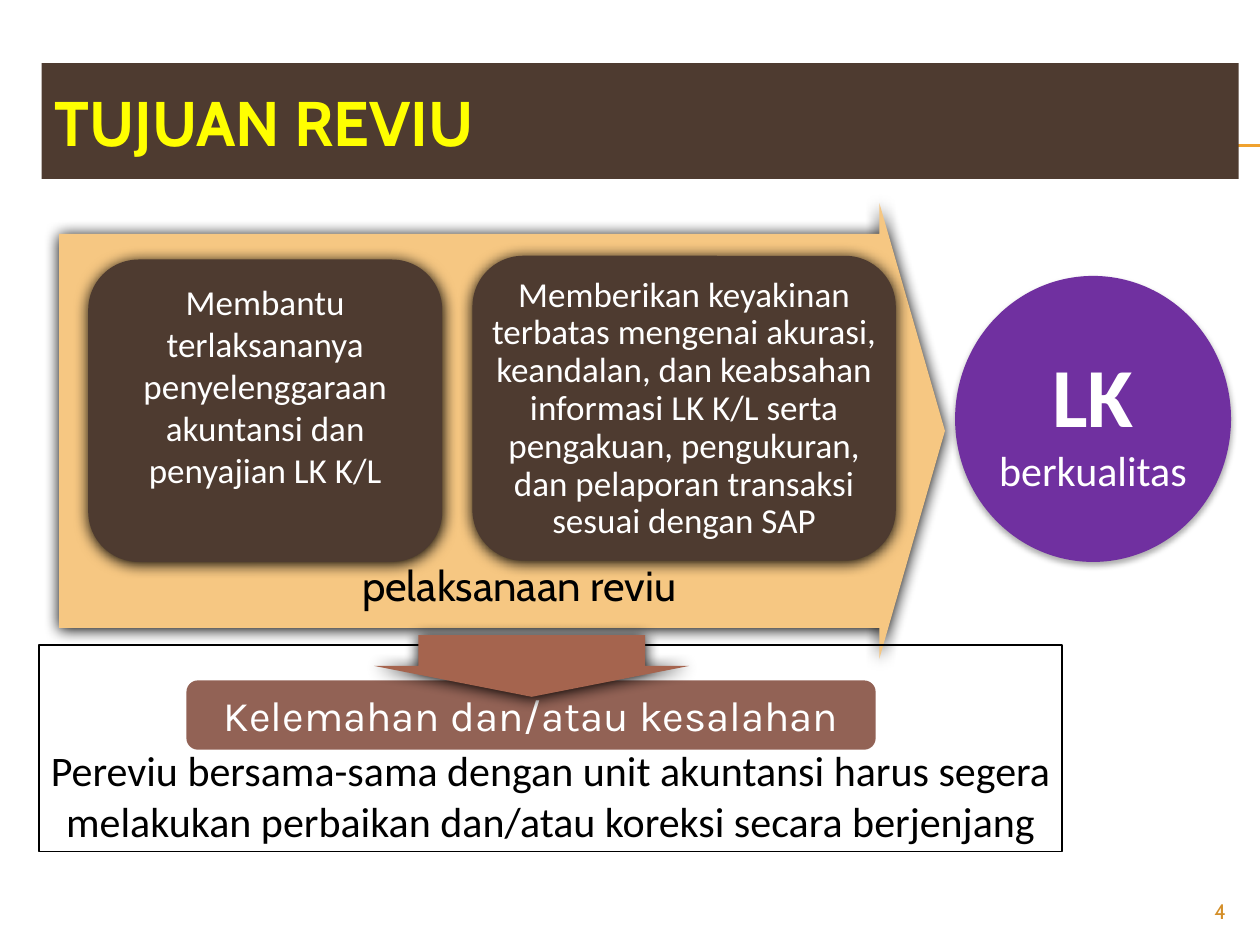
from dataclasses import dataclass

from lxml.etree import SubElement
from pptx import Presentation
from pptx.dml.color import RGBColor
from pptx.enum.shapes import MSO_CONNECTOR, MSO_SHAPE
from pptx.enum.text import MSO_ANCHOR, MSO_AUTO_SIZE, PP_ALIGN
from pptx.oxml.ns import qn
from pptx.util import Inches, Pt


@dataclass(frozen=True)
class Theme:
    brown: str = "4E3B30"
    sand: str = "F6C782"
    rust: str = "A5644E"
    clay: str = "926255"
    purple: str = "7030A0"
    gold: str = "F0A22E"
    number: str = "D48F29"
    yellow: str = "FFFF00"
    white: str = "FFFFFF"
    black: str = "000000"
    heading: str = "Cabin"
    body: str = "Calibri"
    label: str = "Karla"
    title_size: int = 36
    big_size: int = 48
    text_size: int = 24
    box_size: int = 20
    number_size: int = 12
    # Shadows: opacity in percent, blur and distance in points
    glow: tuple = (100, 8.5, 1)
    soft: tuple = (32, 3.5, 2.2)


class SlideBuilder:
    def __init__(self, slide, theme):
        self.s = slide
        self.theme = theme

    def line(self, x1, y1, x2, y2):
        c = self.s.shapes.add_connector(
            MSO_CONNECTOR.STRAIGHT, *map(Inches, (x1, y1, x2, y2)))
        c.line.color.rgb = RGBColor.from_string(self.theme.gold)
        c.line.width = Pt(0.75)
        SubElement(c._element.spPr, qn("a:effectLst"))

    def shadow(self, sp, opacity, blur, dist):
        effects = sp._element.spPr.find(qn("a:effectLst"))
        outer = SubElement(effects, qn("a:outerShdw"), blurRad=str(Pt(blur)),
                           dist=str(Pt(dist)), dir="5400000", rotWithShape="0")
        color = SubElement(outer, qn("a:srgbClr"), val=self.theme.black)
        SubElement(color, qn("a:alpha"), val=str(opacity * 1000))

    def shape(self, kind, box, fill=None, line=None, shadow=None, adj=()):
        sp = self.s.shapes.add_shape(kind, *map(Inches, box))
        for i, value in enumerate(adj):
            sp.adjustments[i] = value
        if fill:
            sp.fill.solid()
            sp.fill.fore_color.rgb = RGBColor.from_string(fill)
        else:
            sp.fill.background()
        if line:
            sp.line.color.rgb = RGBColor.from_string(line)
            sp.line.width = Pt(0.75)
        else:
            sp.line.fill.background()
        sp.shadow.inherit = False
        if shadow:
            self.shadow(sp, *shadow)
        return sp

    def set_text(self, sp, text, size, color, font=None, bold=False,
                 align=PP_ALIGN.CENTER, anchor=MSO_ANCHOR.TOP, side=0.1,
                 spacing=None, add=False):
        tf = sp.text_frame
        tf.word_wrap = True
        tf.vertical_anchor = anchor
        tf.margin_left = tf.margin_right = Inches(side)
        p = tf.add_paragraph() if add else tf.paragraphs[0]
        p.text = text
        p.alignment = align
        if spacing:
            p.line_spacing = spacing
        p.font.size = Pt(size)
        p.font.name = font or self.theme.body
        p.font.bold = bold
        p.font.color.rgb = RGBColor.from_string(color)
        return tf

    def text(self, box, text, size, color, font, align=PP_ALIGN.CENTER):
        sp = self.s.shapes.add_textbox(*map(Inches, box))
        return self.set_text(sp, text, size, color, font, align=align)

    def title(self, box, text):
        t = self.theme
        sp = self.s.shapes.title
        sp.left, sp.top, sp.width, sp.height = map(Inches, box)
        sp.fill.solid()
        sp.fill.fore_color.rgb = RGBColor.from_string(t.brown)
        self.set_text(sp, text, t.title_size, t.yellow, t.heading, bold=True,
                      align=PP_ALIGN.LEFT, anchor=MSO_ANCHOR.MIDDLE)
        # Bring the title bar in front of the rules drawn so far
        self.s.shapes._spTree.append(sp._element)


def main():
    prs = Presentation()
    prs.slide_width, prs.slide_height = Inches(10), Inches(7.5)
    t = Theme()
    b = SlideBuilder(prs.slides.add_slide(prs.slide_layouts[5]), t)

    # Double rule and title bar
    for y in (1.15, 1.16):
        b.line(0.56, y, 10, y)
    b.title((0.33, 0.5, 9.5, 0.92), "TUJUAN REVIU")

    # Review process arrow
    b.shape(MSO_SHAPE.RIGHT_ARROW, (0.47, 1.61, 7.03, 3.62), t.sand,
            shadow=t.glow, adj=(0.864, 0.144))
    tf = b.text((2.07, 4.39, 4.1, 0.5), "pelaksanaan reviu",
                t.text_size, t.black, t.heading)
    tf.auto_size = MSO_AUTO_SIZE.SHAPE_TO_FIT_TEXT

    # Two purposes
    purposes = [
        ((0.7, 2.06, 2.81, 2.4), 0.1, None,
         "Membantu terlaksananya penyelenggaraan akuntansi dan "
         "penyajian LK K/L"),
        ((3.75, 2.03, 3.36, 2.42), 0, 0.9,
         "Memberikan keyakinan terbatas mengenai akurasi, keandalan, dan "
         "keabsahan informasi LK K/L serta pengakuan, pengukuran, dan "
         "pelaporan transaksi sesuai dengan SAP"),
    ]
    for box, side, spacing, text in purposes:
        sp = b.shape(MSO_SHAPE.ROUNDED_RECTANGLE, box, t.brown, shadow=t.glow)
        b.set_text(sp, text, t.box_size, t.white, side=side, spacing=spacing)

    # Result circle
    circle = b.shape(MSO_SHAPE.OVAL, (7.58, 2.19, 2.19, 2.27), t.purple,
                     shadow=t.soft)
    b.set_text(circle, "LK", t.big_size, t.white, bold=True,
               anchor=MSO_ANCHOR.MIDDLE, side=0)
    tf = b.set_text(circle, "berkualitas", t.text_size, t.white,
                    anchor=MSO_ANCHOR.MIDDLE, side=0, add=True)
    tf.word_wrap = False

    # Follow-up on weaknesses
    frame = b.shape(MSO_SHAPE.RECTANGLE, (0.31, 5.12, 8.12, 1.64),
                    line=t.black)
    b.set_text(frame, "Pereviu bersama-sama dengan unit akuntansi harus segera "
               "melakukan perbaikan dan/atau koreksi secara berjenjang",
               t.text_size, t.black, anchor=MSO_ANCHOR.BOTTOM, side=0.04)
    label = b.shape(MSO_SHAPE.ROUNDED_RECTANGLE, (1.48, 5.4, 5.47, 0.55),
                    t.clay)
    b.set_text(label, "Kelemahan dan/atau kesalahan", t.text_size, t.white,
               t.label, anchor=MSO_ANCHOR.MIDDLE)
    b.shape(MSO_SHAPE.DOWN_ARROW, (2.97, 5.04, 2.5, 0.49), t.rust,
            shadow=t.glow, adj=(0.72, 0.5))

    # Page number
    b.text((9, 7.08, 0.83, 0.27), "4", t.number_size, t.number, t.heading,
           PP_ALIGN.RIGHT)

    prs.save("out.pptx")


if __name__ == "__main__":
    main()
